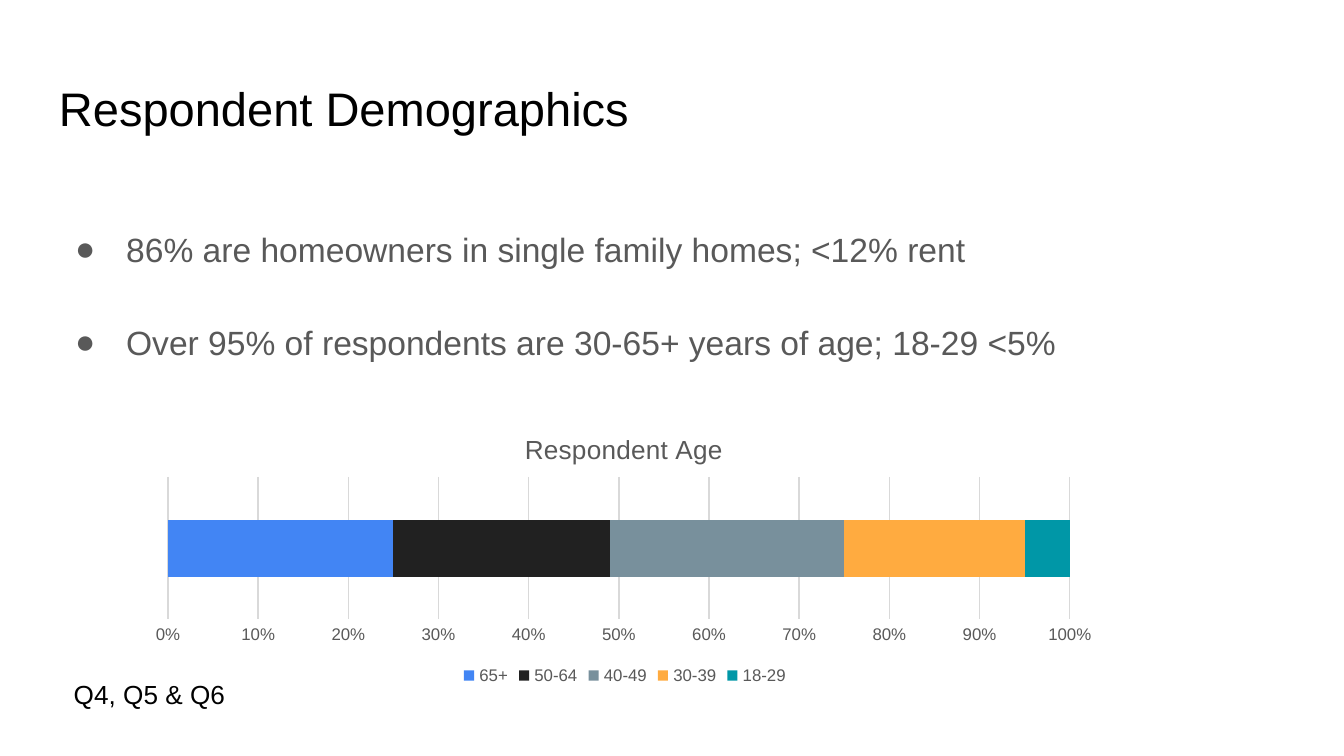
from dataclasses import dataclass

import pptx
import pptx.chart.data
import pptx.dml.color
import pptx.enum.chart
import pptx.enum.text
import pptx.oxml
import pptx.oxml.ns
import pptx.util

Inches = pptx.util.Inches
Pt = pptx.util.Pt
RGBColor = pptx.dml.color.RGBColor
Anchor = pptx.enum.text.MSO_ANCHOR

FONT = "Arial"
BLACK = RGBColor(0x00, 0x00, 0x00)
GRAY = RGBColor(0x59, 0x59, 0x59)
GRID = RGBColor(0xD9, 0xD9, 0xD9)
BLUE = RGBColor(0x42, 0x85, 0xF4)
COAL = RGBColor(0x21, 0x21, 0x21)
SLATE = RGBColor(0x78, 0x90, 0x9C)
ORANGE = RGBColor(0xFF, 0xAB, 0x40)
TEAL = RGBColor(0x00, 0x97, 0xA7)

WIDE = 7.26
HIGH = 2.06


@dataclass
class Label:
    lines: list[str]
    box: tuple[float, float, float, float]
    size: float
    color: RGBColor
    anchor: Anchor = Anchor.TOP
    inset: float = 0.1
    bullet: bool = False


@dataclass
class Group:
    name: str
    share: int
    color: RGBColor


LABELS = [
    Label(["Respondent Demographics"], (0.34, 0.49, 9.32, 0.63), 25.2, BLACK,
          anchor=Anchor.MIDDLE),
    Label(["86% are homeowners in single family homes; <12% rent",
           "Over 95% of respondents are 30-65+ years of age; 18-29 <5%"],
          (0.34, 1.26, 9.32, 3.74), 18, GRAY, inset=0.4, bullet=True),
    Label(["Q4, Q5 & Q6"], (0.45, 5, 1.98, 0.34), 14, BLACK, inset=0.05),
]

GROUPS = [
    Group("65+", 25, BLUE),
    Group("50-64", 24, COAL),
    Group("40-49", 26, SLATE),
    Group("30-39", 20, ORANGE),
    Group("18-29", 5, TEAL),
]


def style(font, size: float, color: RGBColor) -> None:
    font.name = FONT
    font.size = Pt(size)
    font.color.rgb = color


def add_bullet(para) -> None:
    props = para._p.get_or_add_pPr()
    props.set("marL", str(Inches(0.5)))
    props.set("indent", str(Inches(-0.38)))
    space = pptx.oxml.ns.nsdecls("a")
    for xml in (f'<a:buClr {space}><a:srgbClr val="{GRAY}"/></a:buClr>',
                f'<a:buFont {space} typeface="{FONT}"/>',
                f'<a:buChar {space} char="●"/>'):
        props.append(pptx.oxml.parse_xml(xml))


def add_label(slide, label: Label) -> None:
    frame = slide.shapes.add_textbox(*map(Inches, label.box)).text_frame
    frame.word_wrap = True
    frame.vertical_anchor = label.anchor
    frame.margin_top = Inches(label.inset)
    frame.margin_bottom = Inches(min(label.inset, 0.1))
    for row, line in enumerate(label.lines):
        para = frame.add_paragraph() if row else frame.paragraphs[0]
        para.text = line
        if label.bullet:
            add_bullet(para)
            para.line_spacing = 1.15
            if row:
                para.space_before = Pt(25)
        style(para.font, label.size, label.color)


def set_layout(parent, index: int, inner: bool = False, **sides: float) -> None:
    for old in parent.findall(pptx.oxml.ns.qn("c:layout")):
        parent.remove(old)
    full = {"x": WIDE, "y": HIGH, "w": WIDE, "h": HIGH}
    target = '<c:layoutTarget val="inner"/>' if inner else ""
    modes = "".join(f'<c:{key}Mode val="edge"/>' for key in "xy")
    values = "".join(f'<c:{key} val="{val / full[key]}"/>'
                     for key, val in sides.items())
    parent.insert(index, pptx.oxml.parse_xml(
        f'<c:layout {pptx.oxml.ns.nsdecls("c")}><c:manualLayout>'
        f'{target}{modes}{values}</c:manualLayout></c:layout>'))


def add_ages(slide, groups: list[Group]) -> None:
    data = pptx.chart.data.CategoryChartData()
    data.categories = ["1"]
    for group in groups:
        data.add_series(group.name, [group.share])
    chart = slide.shapes.add_chart(
        pptx.enum.chart.XL_CHART_TYPE.BAR_STACKED_100,
        Inches(1.02), Inches(3.08), Inches(WIDE), Inches(HIGH), data).chart
    style(chart.font, 10, BLACK)

    chart.has_title = True
    title = chart.chart_title
    title.text_frame.text = "Respondent Age"
    font = title.text_frame.paragraphs[0].font
    style(font, 14, GRAY)
    font.bold = False
    set_layout(title._element, 1, x=2.85, y=0.1)

    chart.has_legend = True
    chart.legend.position = pptx.enum.chart.XL_LEGEND_POSITION.BOTTOM
    chart.legend.include_in_layout = False
    style(chart.legend.font, 9, GRAY)

    plot = chart.plots[0]
    plot.gap_width = 150
    plot.overlap = 100
    plot.vary_by_categories = False
    for series, group in zip(plot.series, groups):
        series.format.fill.solid()
        series.format.fill.fore_color.rgb = group.color
    set_layout(chart._chartSpace.chart.plotArea, 0, inner=True,
               x=0.23, y=0.47, w=6.71, h=1.06)

    chart.category_axis.visible = False
    axis = chart.value_axis
    axis.major_unit = 0.1
    axis.major_tick_mark = pptx.enum.chart.XL_TICK_MARK.NONE
    axis.minor_tick_mark = pptx.enum.chart.XL_TICK_MARK.NONE
    axis.format.line.fill.background()
    axis.tick_labels.number_format = "0%"
    axis.tick_labels.number_format_is_linked = False
    style(axis.tick_labels.font, 9, GRAY)
    grid = axis.major_gridlines.format.line
    grid.color.rgb = GRID
    grid.width = Pt(0.75)


def main() -> None:
    deck = pptx.Presentation()
    deck.slide_width = Inches(10)
    deck.slide_height = Inches(10 * 9 / 16)
    slide = deck.slides.add_slide(deck.slide_layouts[6])
    for label in LABELS:
        add_label(slide, label)
    add_ages(slide, GROUPS)
    deck.save("out.pptx")


if __name__ == "__main__":
    main()
